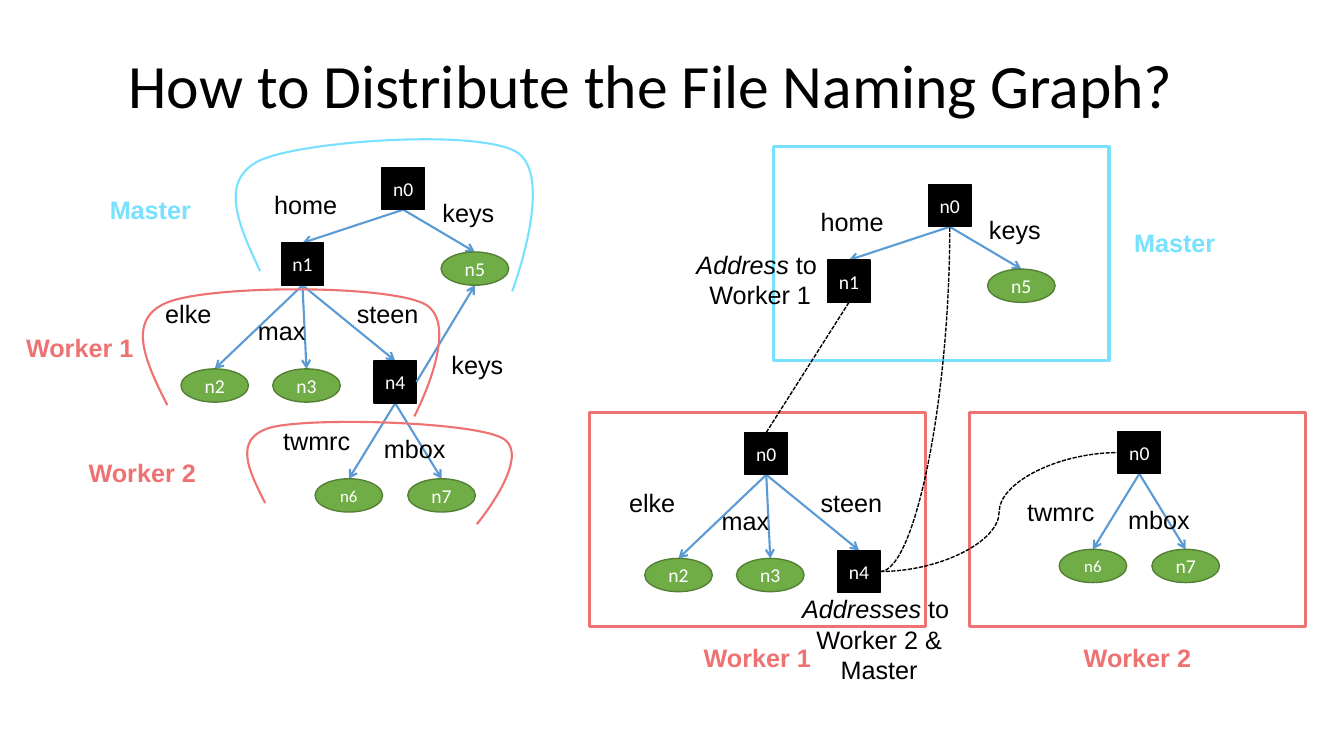
from lxml import etree
from pptx import Presentation
from pptx.dml.color import RGBColor
from pptx.enum.dml import MSO_LINE
from pptx.enum.shapes import MSO_CONNECTOR, MSO_SHAPE
from pptx.enum.text import MSO_ANCHOR, MSO_AUTO_SIZE, PP_ALIGN
from pptx.oxml.ns import qn
from pptx.util import Inches, Pt

BLACK = RGBColor(0x00, 0x00, 0x00)
WHITE = RGBColor(0xFF, 0xFF, 0xFF)
GREEN = RGBColor(0x70, 0xAD, 0x47)
DARK_GREEN = RGBColor(0x53, 0x80, 0x35)
BLUE = RGBColor(0x5B, 0x9B, 0xD5)
SKY = RGBColor(0x77, 0xE1, 0xFF)
CORAL = RGBColor(0xEF, 0x72, 0x73)

DIR_SIZE = (0.42, 0.42)
FILE_SIZE = (0.67, 0.33)

# Children: name, is directory, offset of the top centre from the parent's bottom centre.
# Labels: text, offset of the text box from the parent's bottom centre, width.
MASTER = (
    [("n1", True, -1.0, 0.33), ("n5", False, 0.71, 0.42)],
    [("home", -1.38, -0.25, 0.92), ("keys", 0.29, -0.17, 0.92)],
)
WORKER_1 = (
    [("n2", False, -0.87, 0.83), ("n3", False, 0.04, 0.83), ("n4", True, 0.92, 0.75)],
    [("elke", -1.46, 0.08, 0.75), ("max", -0.54, 0.25, 0.75), ("steen", 0.44, 0.08, 0.92)],
)
WORKER_2 = (
    [("n6", False, -0.46, 0.75), ("n7", False, 0.46, 0.75)],
    [("twmrc", -1.21, 0.17, 1.0), ("mbox", -0.21, 0.25, 1.0)],
)


def style_font(font, size, color, name="Arial", bold=None, italic=None):
    font.size, font.name, font.bold, font.italic = Pt(size), name, bold, italic
    font.color.rgb = color


def add_text(shapes, text, x, y, w, h=0.4, color=BLACK, bold=None, wrap=True):
    box = shapes.add_textbox(Inches(x), Inches(y), Inches(w), Inches(h))
    tf = box.text_frame
    tf.word_wrap = wrap
    tf.auto_size = MSO_AUTO_SIZE.SHAPE_TO_FIT_TEXT
    tf.text = text
    for r in tf.paragraphs[0].runs:
        style_font(r.font, 18, color, bold=bold)
    return tf


def add_owner(shapes, text, x, y, color):
    width = 1.02 if text == "Master" else 1.28
    add_text(shapes, text, x, y, width, color=color, bold=True, wrap=False)


def add_address(shapes, term, lines, x, y, w, h):
    """Centred note: an italic term, ' to', a line break, then the lines."""
    tf = add_text(shapes, term, x, y, w, h, wrap=False)
    p = tf.paragraphs[0]
    p.runs[0].font.italic = True
    p.add_run().text = " to "
    p.add_line_break()
    p.add_run().text = lines[0]
    for r in p.runs[1:]:
        style_font(r.font, 18, BLACK)
    for line in lines[1:]:
        p = tf.add_paragraph()
        p.text = line
        style_font(p.runs[0].font, 18, BLACK)
    for p in tf.paragraphs:
        p.alignment = PP_ALIGN.CENTER


def add_node(shapes, name, is_dir, cx, top):
    w, h = DIR_SIZE if is_dir else FILE_SIZE
    kind = MSO_SHAPE.RECTANGLE if is_dir else MSO_SHAPE.OVAL
    sp = shapes.add_shape(kind, Inches(cx - w / 2), Inches(top), Inches(w), Inches(h))
    sp.shadow.inherit = False
    sp.fill.solid()
    sp.fill.fore_color.rgb = BLACK if is_dir else GREEN
    sp.line.color.rgb = BLACK if is_dir else DARK_GREEN
    sp.line.width = Pt(1)
    tf = sp.text_frame
    tf.margin_left = tf.margin_right = tf.margin_top = tf.margin_bottom = 0
    tf.word_wrap = False
    tf.vertical_anchor = MSO_ANCHOR.MIDDLE
    tf.text = name
    p = tf.paragraphs[0]
    p.alignment = PP_ALIGN.CENTER
    style_font(p.runs[0].font, 12 if name == "n6" else 14, WHITE, "Calibri")


def add_link(shapes, start, end, color, width, kind=MSO_CONNECTOR.STRAIGHT):
    c = shapes.add_connector(kind, *(Inches(v) for v in (*start, *end)))
    c.line.color.rgb = color
    c.line.width = Pt(width)
    etree.SubElement(c._element.spPr, qn("a:effectLst"))
    return c


def add_arrow(shapes, start, end):
    c = add_link(shapes, start, end, BLUE, 1.5)
    etree.SubElement(c.line._get_or_add_ln(), qn("a:tailEnd"), type="arrow")


def add_reference(shapes, start, end, kind=MSO_CONNECTOR.STRAIGHT):
    c = add_link(shapes, start, end, BLACK, 1, kind)
    c.line.dash_style = MSO_LINE.SQUARE_DOT
    return c


def add_branches(shapes, tree, x, y):
    """Draws the children, arrows and labels below a root whose bottom centre is x, y."""
    children, labels = tree
    for name, is_dir, dx, dy in children:
        add_arrow(shapes, (x, y), (x + dx, y + dy))
        add_node(shapes, name, is_dir, x + dx, y + dy)
    for text, dx, dy, w in labels:
        add_text(shapes, text, x + dx, y + dy, w)


def add_tree(shapes, tree, x, y):
    add_branches(shapes, tree, x, y)
    add_node(shapes, "n0", True, x, y - DIR_SIZE[1])


def add_frame(shapes, x, y, color):
    sp = shapes.add_shape(MSO_SHAPE.RECTANGLE, Inches(x), Inches(y), Inches(3.33), Inches(2.13))
    sp.shadow.inherit = False
    sp.fill.background()
    sp.line.color.rgb = color
    sp.line.width = Pt(2.25)


def add_boundary(shapes, bounds, start, curves, color):
    """Open outline of Bezier curves; bounds are left, top, right, bottom."""
    left, top, right, bottom = (Inches(v) for v in bounds)
    builder = shapes.build_freeform(left, top)
    builder.add_line_segments([(right, bottom)], close=False)
    sp = builder.convert_to_shape()
    sp.shadow.inherit = False
    sp.fill.background()
    sp.line.color.rgb = color
    sp.line.width = Pt(1.5)
    outline = sp._element.spPr.find(".//" + qn("a:path"))
    for step in list(outline):
        outline.remove(step)
    for tag, points in [("a:moveTo", [start])] + [("a:cubicBezTo", c) for c in curves]:
        step = etree.SubElement(outline, qn(tag))
        for x, y in points:
            etree.SubElement(step, qn("a:pt"), x=str(Inches(x) - left), y=str(Inches(y) - top))


def add_title(shapes, text):
    tf = shapes.add_textbox(Inches(0.75), Inches(0.3), Inches(11.42), Inches(1.15)).text_frame
    tf.word_wrap = True
    tf.vertical_anchor = MSO_ANCHOR.MIDDLE
    tf.text = text
    p = tf.paragraphs[0]
    p.alignment = PP_ALIGN.CENTER
    p.line_spacing = 0.9
    style_font(p.runs[0].font, 44, BLACK, "Calibri")


def add_whole_graph(shapes):
    add_branches(shapes, WORKER_2, 3.92, 4.0)
    add_branches(shapes, WORKER_1, 3.0, 2.83)
    add_arrow(shapes, (4.13, 3.79), (4.71, 2.83))
    add_tree(shapes, MASTER, 4.0, 2.08)
    add_text(shapes, "keys", 4.38, 3.42, 1.0)
    add_boundary(shapes, (1.42, 2.87, 4.36, 4.12), (1.66, 4.02), [
        [(1.45, 3.6), (1.24, 3.17), (1.66, 3.0)],
        [(2.08, 2.83), (3.79, 2.82), (4.2, 3.01)],
        [(4.6, 3.2), (4.11, 4.13), (4.11, 4.13)]], CORAL)
    add_boundary(shapes, (2.34, 1.38, 5.29, 2.89), (2.58, 2.69), [
        [(2.37, 2.24), (2.16, 1.79), (2.58, 1.59)],
        [(3.0, 1.4), (4.69, 1.28), (5.11, 1.5)],
        [(5.52, 1.72), (5.08, 2.89), (5.08, 2.89)]], SKY)
    add_boundary(shapes, (2.45, 4.18, 5.08, 5.2), (2.63, 4.99), [
        [(2.47, 4.67), (2.3, 4.35), (2.69, 4.24)],
        [(3.08, 4.14), (4.63, 4.18), (4.97, 4.34)],
        [(5.31, 4.5), (4.73, 5.2), (4.73, 5.2)]], CORAL)
    add_owner(shapes, "Master", 0.99, 1.88, SKY)
    add_owner(shapes, "Worker 1", 0.16, 3.25, CORAL)
    add_owner(shapes, "Worker 2", 0.78, 4.49, CORAL)


def add_distributed_graph(shapes):
    for owner, color, frame, label, tree, root in [
        ("Master", SKY, (7.67, 1.45), (11.15, 2.21), MASTER, (9.42, 2.25)),
        ("Worker 1", CORAL, (5.85, 4.09), (6.88, 6.32), WORKER_1, (7.6, 4.71)),
        ("Worker 2", CORAL, (9.62, 4.09), (10.65, 6.32), WORKER_2, (11.3, 4.7)),
    ]:
        add_frame(shapes, *frame, color)
        add_owner(shapes, owner, *label, color)
        add_tree(shapes.add_group_shape().shapes, tree, *root)
    add_reference(shapes, (8.42, 3.0), (7.6, 4.29))
    add_address(shapes, "Address", ["Worker 1"], 6.8, 2.42, 1.48, 0.71)
    add_reference(shapes, (8.73, 5.67), (11.09, 4.49), MSO_CONNECTOR.CURVE)
    add_address(shapes, "Addresses", ["Worker 2 &", "Master"], 7.85, 5.84, 1.74, 1.01)
    bend = add_reference(shapes, (8.73, 5.67), (9.42, 2.25), MSO_CONNECTOR.CURVE)
    bend._element.spPr.find(qn("a:prstGeom")).set("prst", "curvedConnector2")


def main():
    prs = Presentation()
    prs.slide_width, prs.slide_height = Inches(13.33), Inches(7.5)
    s = prs.slides.add_slide(prs.slide_layouts[6])
    add_title(s.shapes, "How to Distribute the File Naming Graph?")
    add_whole_graph(s.shapes)
    add_distributed_graph(s.shapes)
    prs.save("out.pptx")


if __name__ == "__main__":
    main()
